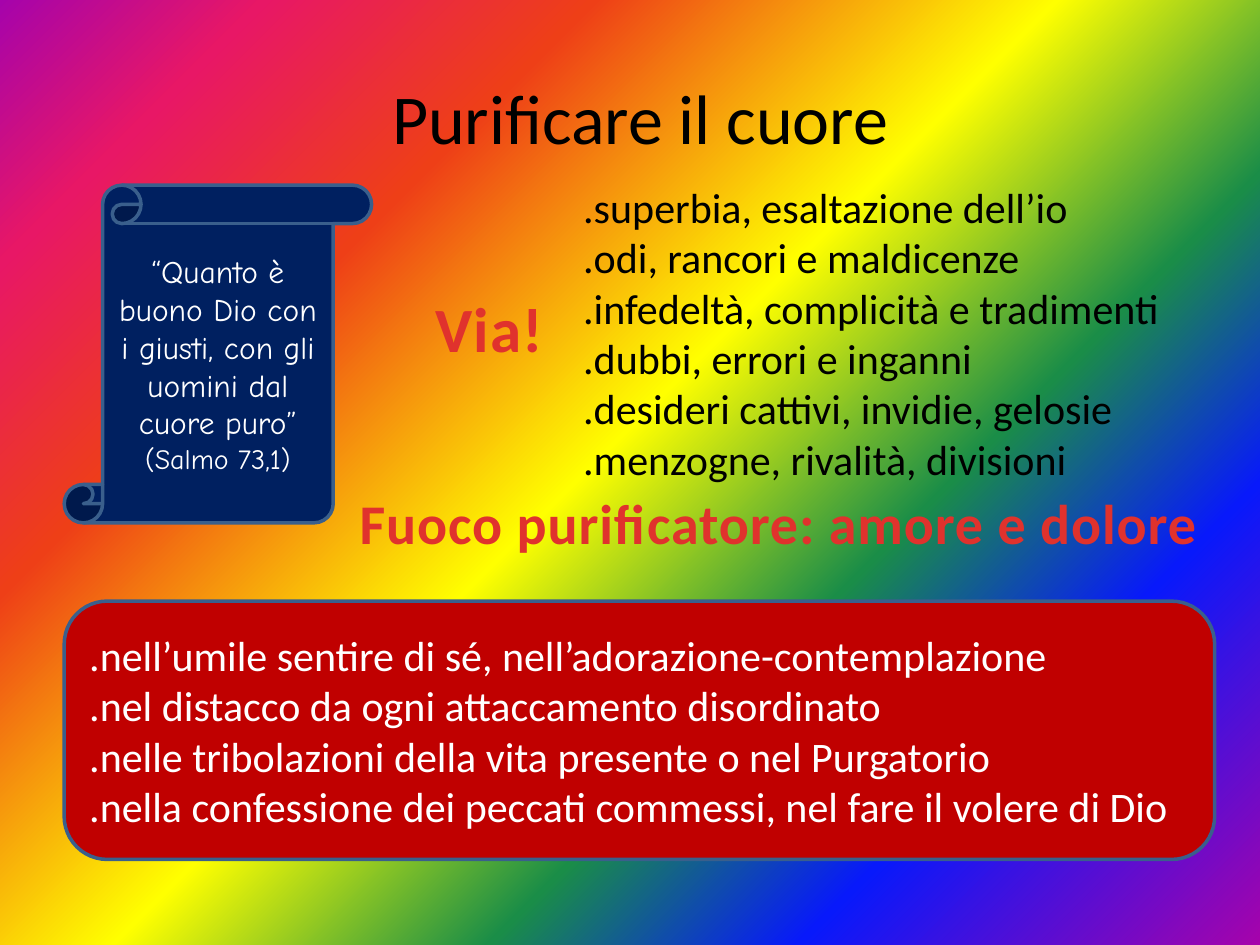
from pptx import Presentation
from pptx.dml.color import RGBColor
from pptx.enum import shapes, text
from pptx.oxml import ns, parse_xml
from pptx.util import Pt

COLORS = {
    "black": "000000", "white": "FFFFFF", "navy": "002060", "red": "C00000",
    "outline": "3A5F8C", "accent": "E0322D", "accent_dark": "A2201C",
}
RAINBOW = [(0, "A603AB"), (21, "0819FB"), (35, "1A8D48"), (52, "FFFF00"),
           (73, "EE3F17"), (88, "E81766"), (100, "A603AB")]
SINS = [".superbia, esaltazione dell’io", ".odi, rancori e maldicenze",
        ".infedeltà, complicità e tradimenti", ".dubbi, errori e inganni",
        ".desideri cattivi, invidie, gelosie", ".menzogne, rivalità, divisioni"]
REMEDIES = [".nell’umile sentire di sé, nell’adorazione-contemplazione",
            ".nel distacco da ogni attaccamento disordinato",
            ".nelle tribolazioni della vita presente o nel Purgatorio",
            ".nella confessione dei peccati commessi, nel fare il volere di Dio"]


def rgb(name):
    return RGBColor.from_string(COLORS[name])


def format_text(shape, size, color, align, font="Calibri"):
    """Give every paragraph of the shape the same alignment and font."""
    for paragraph in shape.text_frame.paragraphs:
        paragraph.alignment = align
        paragraph.space_before = Pt(0)
        for run in paragraph.runs:
            run.font.size = Pt(size)
            run.font.name = font
            run.font.color.rgb = rgb(color)


LEFT, CENTER = text.PP_ALIGN.LEFT, text.PP_ALIGN.CENTER
MIDDLE = text.MSO_ANCHOR.MIDDLE

presentation = Presentation()
presentation.slide_width, presentation.slide_height = Pt(720), Pt(540)
slide = presentation.slides.add_slide(presentation.slide_layouts[1])

# Rainbow background spreading from the bottom right corner
slide.background.fill.gradient()
gradient = slide.element.find(".//" + ns.qn("a:gradFill"))
stops = "".join(f'<a:gs pos="{position * 1000}"><a:srgbClr val="{color}"/></a:gs>'
                for position, color in RAINBOW)
gradient.getparent().replace(gradient, parse_xml(
    f'<a:gradFill {ns.nsdecls("a")} rotWithShape="1"><a:gsLst>{stops}</a:gsLst>'
    '<a:path path="circle"><a:fillToRect l="100000" t="100000"/></a:path>'
    '<a:tileRect r="-100000" b="-100000"/></a:gradFill>'))

# Title
title = slide.shapes.title
title.left, title.top, title.width, title.height = Pt(184.3), Pt(21), Pt(363), Pt(90.7)
title.text_frame.text = "Purificare il cuore"
title.text_frame.vertical_anchor = MIDDLE
format_text(title, 40, "black", CENTER)

# List of what to cast away
sins = slide.placeholders[1]
sins.left, sins.top, sins.width, sins.height = Pt(326), Pt(100), Pt(363), Pt(181.5)
sins.text_frame.text = "\n".join(SINS)
sins.text_frame.auto_size = text.MSO_AUTO_SIZE.SHAPE_TO_FIT_TEXT
format_text(sins, 24, "black", LEFT)
for paragraph in sins.text_frame.paragraphs:
    properties = paragraph._p.get_or_add_pPr()
    properties.set("marL", "0")
    properties.set("indent", "0")
    properties.append(parse_xml(f'<a:buNone {ns.nsdecls("a")}/>'))

# Scroll with the psalm and panel with the remedies
panels = []
for kind, left, top, width, height, fill, words in [
    (shapes.MSO_SHAPE.VERTICAL_SCROLL, 36.7, 105.8, 175.7, 193, "navy",
     "“Quanto è buono Dio con i giusti, con gli uomini dal cuore puro” "),
    (shapes.MSO_SHAPE.ROUNDED_RECTANGLE, 36.7, 343.5, 657.4, 147.6, "red",
     "\n".join(REMEDIES)),
]:
    panel = slide.shapes.add_shape(kind, Pt(left), Pt(top), Pt(width), Pt(height))
    panel.shadow.inherit = False
    panel.fill.solid()
    panel.fill.fore_color.rgb = rgb(fill)
    panel.line.color.rgb = rgb("outline")
    panel.line.width = Pt(2)
    panel.text_frame.text = words
    panel.text_frame.word_wrap = True
    panel.text_frame.vertical_anchor = MIDDLE
    panels.append(panel)

scroll, remedies = panels
reference = scroll.text_frame.paragraphs[0].add_run()
reference.text = "(Salmo 73,1)"
format_text(scroll, 18, "white", CENTER, "Comic Neue")
reference.font.size = Pt(16)
format_text(remedies, 24, "white", LEFT)

# Headings with gradient letters
for words, left, top, width, height, size in [
    ("Via!", 241.2, 162, 77, 51, 36),
    ("Fuoco purificatore: amore e dolore", 195.8, 275.8, 498.2, 46, 32),
]:
    heading = slide.shapes.add_textbox(Pt(left), Pt(top), Pt(width), Pt(height))
    heading.text_frame.text = words
    heading.text_frame.word_wrap = False
    heading.text_frame.auto_size = text.MSO_AUTO_SIZE.SHAPE_TO_FIT_TEXT
    format_text(heading, size, "accent", CENTER)
    run = heading.text_frame.paragraphs[0].runs[0]
    run.font.bold = True
    run._r.get_or_add_rPr().set("spc", "50")
    run.font.fill.gradient()
    run.font.fill.gradient_angle = 270
    for stop, position, color in zip(run.font.fill.gradient_stops, (0.25, 1),
                                     ("accent", "accent_dark")):
        stop.position = position
        stop.color.rgb = rgb(color)

presentation.save("out.pptx")
